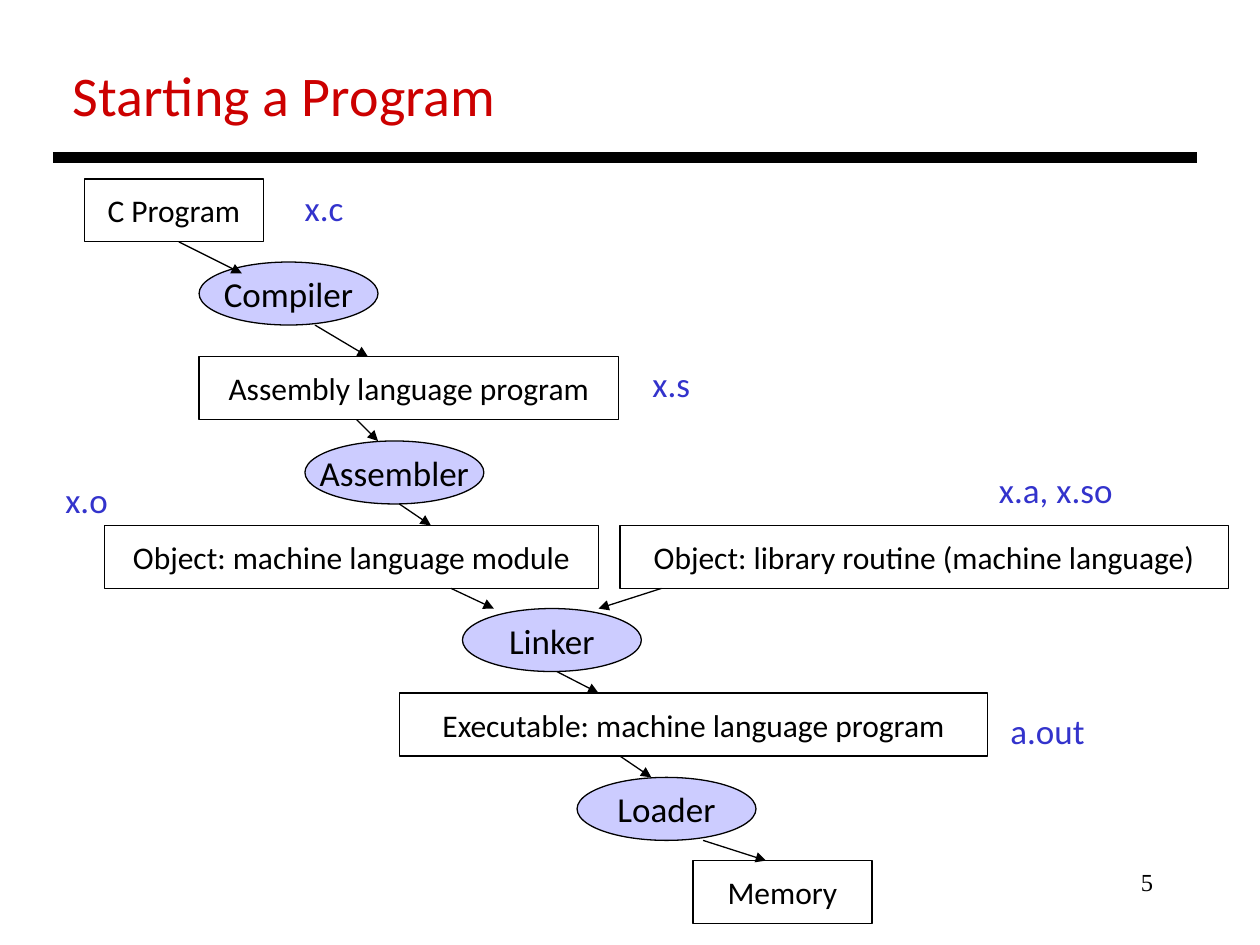
"""Build the slide that shows the steps from a C program to memory."""
from lxml import etree
from pptx import Presentation
from pptx.dml.color import RGBColor
from pptx.enum.shapes import MSO_CONNECTOR, MSO_SHAPE
from pptx.enum.text import MSO_ANCHOR, MSO_AUTO_SIZE, PP_ALIGN
from pptx.oxml.ns import qn
from pptx.util import Inches, Pt

BLACK = RGBColor(0x00, 0x00, 0x00)
WHITE = RGBColor(0xFF, 0xFF, 0xFF)
RED = RGBColor(0xCC, 0x00, 0x00)
BLUE = RGBColor(0x33, 0x33, 0xCC)
LILAC = RGBColor(0xCC, 0xCC, 0xFF)
STEP_H = 0.5
TOOL_W = 1.42


def write(sp, text, size, color, align=PP_ALIGN.LEFT, font="Calibri"):
    tf = sp.text_frame
    tf.word_wrap = False
    p = tf.paragraphs[0]
    p.alignment = align
    r = p.add_run()
    r.text = text
    r.font.size = Pt(size)
    r.font.name = font
    r.font.color.rgb = color
    return tf


def draw_line(x1, y1, x2, y2, width):
    cn = s.shapes.add_connector(
        MSO_CONNECTOR.STRAIGHT, Inches(x1), Inches(y1), Inches(x2), Inches(y2))
    cn.line.color.rgb = BLACK
    cn.line.width = Pt(width)
    etree.SubElement(cn._element.spPr, qn("a:effectLst"))
    return cn


prs = Presentation()
prs.slide_width, prs.slide_height = Inches(10), Inches(7.5)
s = prs.slides.add_slide(prs.slide_layouts[6])

number = s.shapes.add_textbox(Inches(7.17), Inches(6.83), Inches(2.08), Inches(0.5))
write(number, "5", 14, BLACK, PP_ALIGN.RIGHT, "Times New Roman").word_wrap = True

draw_line(0.42, 1.25, 9.5, 1.25, 6)

files = [
    ("C Program", 0.67, 1.42, 1.42),
    ("Assembly language program", 1.58, 2.83, 3.33),
    ("Object: machine language module", 0.83, 4.17, 3.92),
    ("Object: library routine (machine language)", 4.92, 4.17, 4.83),
    ("Executable: machine language program", 3.17, 5.5, 4.67),
    ("Memory", 5.5, 6.83, 1.42),
]
tools = [
    ("Compiler", 1.58, 2.08, TOOL_W),
    ("Assembler", 2.42, 3.5, TOOL_W),
    ("Linker", 3.67, 4.83, TOOL_W),
    ("Loader", 4.58, 6.17, TOOL_W),
]
for steps, shape, fill, size in [
    (files, MSO_SHAPE.RECTANGLE, WHITE, 18),
    (tools, MSO_SHAPE.OVAL, LILAC, 20),
]:
    for text, x, y, w in steps:
        sp = s.shapes.add_shape(shape, Inches(x), Inches(y), Inches(w), Inches(STEP_H))
        sp.shadow.inherit = False
        sp.fill.solid()
        sp.fill.fore_color.rgb = fill
        sp.line.color.rgb = BLACK
        sp.line.width = Pt(0.75)
        tf = write(sp, text, size, BLACK, PP_ALIGN.CENTER)
        tf.vertical_anchor = MSO_ANCHOR.MIDDLE

arrows = [
    (1.42, 1.92, 1.92, 2.17),
    (2.5, 2.58, 2.92, 2.83),
    (2.83, 3.33, 3, 3.5),
    (3.17, 4, 3.42, 4.17),
    (3.58, 4.67, 3.92, 4.83),
    (5.25, 4.67, 4.75, 4.83),
    (4.42, 5.33, 4.75, 5.5),
    (4.92, 6, 5.17, 6.17),
    (5.58, 6.67, 6.08, 6.83),
]
for ends in arrows:
    cn = draw_line(*ends, 0.75)
    etree.SubElement(cn.line._get_or_add_ln(), qn("a:tailEnd"), type="triangle")

labels = [
    ("Starting a Program", 0.48, 0.43, 3.6, 0.64, 32, RED),
    ("x.c", 2.32, 1.43, 0.51, 0.44, 20, BLUE),
    ("x.s", 5.08, 2.83, 0.5, 0.44, 20, BLUE),
    ("x.o", 0.42, 3.75, 0.54, 0.44, 20, BLUE),
    ("x.a, x.so", 7.83, 3.67, 1.11, 0.44, 20, BLUE),
    ("a.out", 7.92, 5.58, 0.82, 0.44, 20, BLUE),
]
for text, x, y, w, h, size, color in labels:
    sp = s.shapes.add_textbox(Inches(x), Inches(y), Inches(w), Inches(h))
    tf = write(sp, text, size, color)
    tf.auto_size = MSO_AUTO_SIZE.SHAPE_TO_FIT_TEXT

prs.save("out.pptx")
